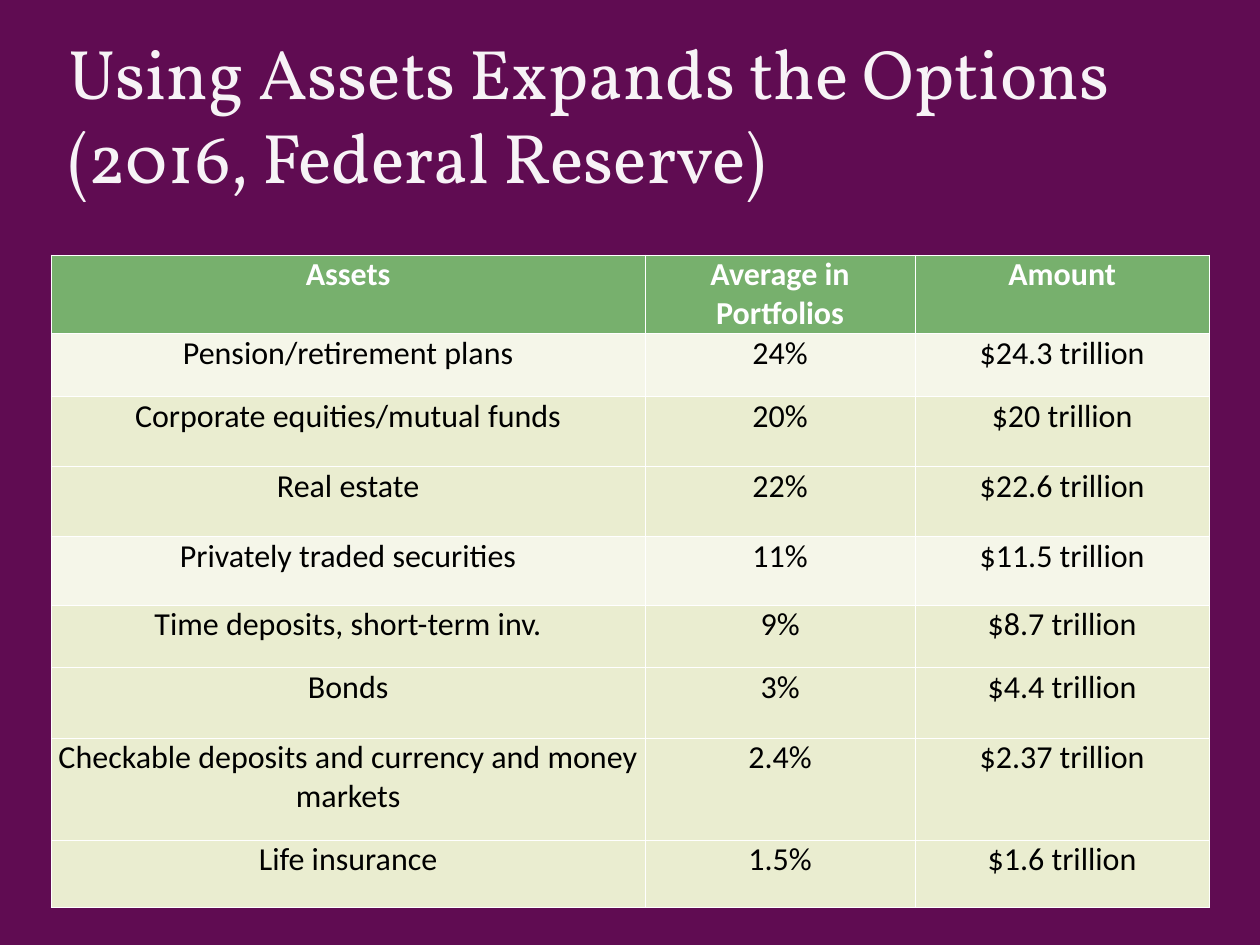
from lxml.etree import SubElement
from pptx import Presentation
from pptx.dml.color import RGBColor as RGB
from pptx.enum.text import MSO_ANCHOR as Anchor, PP_ALIGN as Align
from pptx.oxml.ns import qn
from pptx.util import Pt

TITLE = "Using Assets Expands the Options (2016, Federal Reserve)"
HEAD = ("Assets", "Average in Portfolios", "Amount")
ASSETS = [
    ("Pension/retirement plans", "24%", "$24.3 trillion"),
    ("Corporate equities/mutual funds", "20%", "$20 trillion"),
    ("Real estate", "22%", "$22.6 trillion"),
    ("Privately traded securities", "11%", "$11.5 trillion"),
    ("Time deposits, short-term inv.", "9%", "$8.7 trillion"),
    ("Bonds", "3%", "$4.4 trillion"),
    ("Checkable deposits and currency and money markets", "2.4%", "$2.37 trillion"),
    ("Life insurance", "1.5%", "$1.6 trillion"),
]
WIDTHS = (482.4, 219.6, 239)
HEIGHTS = (64, 51, 57, 57, 55.5, 51, 57, 83, 54.5)
PALE_ROWS = (1, 4)

PLUM = RGB(0x60, 0x0C, 0x52)
GREEN = RGB(0x77, 0xB0, 0x6D)
PALE = RGB(0xF5, 0xF6, 0xE9)
CREAM = RGB(0xEA, 0xED, 0xD0)
SOFT = RGB(0xF7, 0xF3, 0xF6)
WHITE = RGB(0xFF, 0xFF, 0xFF)
BLACK = RGB(0, 0, 0)


def add_title(slide):
    box = slide.shapes.add_textbox(Pt(51), Pt(12), Pt(922), Pt(160))
    frame = box.text_frame
    frame.word_wrap = True
    frame.vertical_anchor = Anchor.MIDDLE
    frame.margin_left = frame.margin_right = Pt(4.5)
    frame.margin_top = frame.margin_bottom = Pt(4.5)
    para = frame.paragraphs[0]
    para.text = TITLE
    para.font.name, para.font.size = "Vollkorn", Pt(57)
    para.font.color.rgb = SOFT


def add_borders(cell):
    props = cell._tc.get_or_add_tcPr()
    for side in ("a:lnL", "a:lnR", "a:lnT", "a:lnB"):
        line = SubElement(props, qn(side), w=str(Pt(1)))
        fill = SubElement(line, qn("a:solidFill"))
        SubElement(fill, qn("a:srgbClr"), val=str(WHITE))


def fill_cell(cell, text, back, ink, bold):
    cell.margin_left = cell.margin_right = 0
    cell.margin_top = cell.margin_bottom = 0
    add_borders(cell)
    cell.fill.solid()
    cell.fill.fore_color.rgb = back
    para = cell.text_frame.paragraphs[0]
    para.text = text
    para.alignment = Align.CENTER
    font = para.font
    font.name, font.size, font.bold = "Calibri", Pt(26), bold
    font.color.rgb = ink


def add_assets(slide):
    rows = [HEAD] + ASSETS
    frame = slide.shapes.add_table(
        len(rows), len(HEAD), Pt(41.8), Pt(207.4), Pt(sum(WIDTHS)), Pt(sum(HEIGHTS)))
    table = frame.table
    for col, width in zip(table.columns, WIDTHS):
        col.width = Pt(width)
    for r, (row, texts) in enumerate(zip(table.rows, rows)):
        row.height = Pt(HEIGHTS[r])
        head = r == 0
        back = GREEN if head else PALE if r in PALE_ROWS else CREAM
        for cell, text in zip(row.cells, texts):
            fill_cell(cell, text, back, WHITE if head else BLACK, head)


def main():
    deck = Presentation()
    deck.slide_width, deck.slide_height = Pt(1024), Pt(768)
    slide = deck.slides.add_slide(deck.slide_layouts[6])
    slide.background.fill.solid()
    slide.background.fill.fore_color.rgb = PLUM
    add_assets(slide)
    add_title(slide)
    deck.save("out.pptx")


if __name__ == "__main__":
    main()
